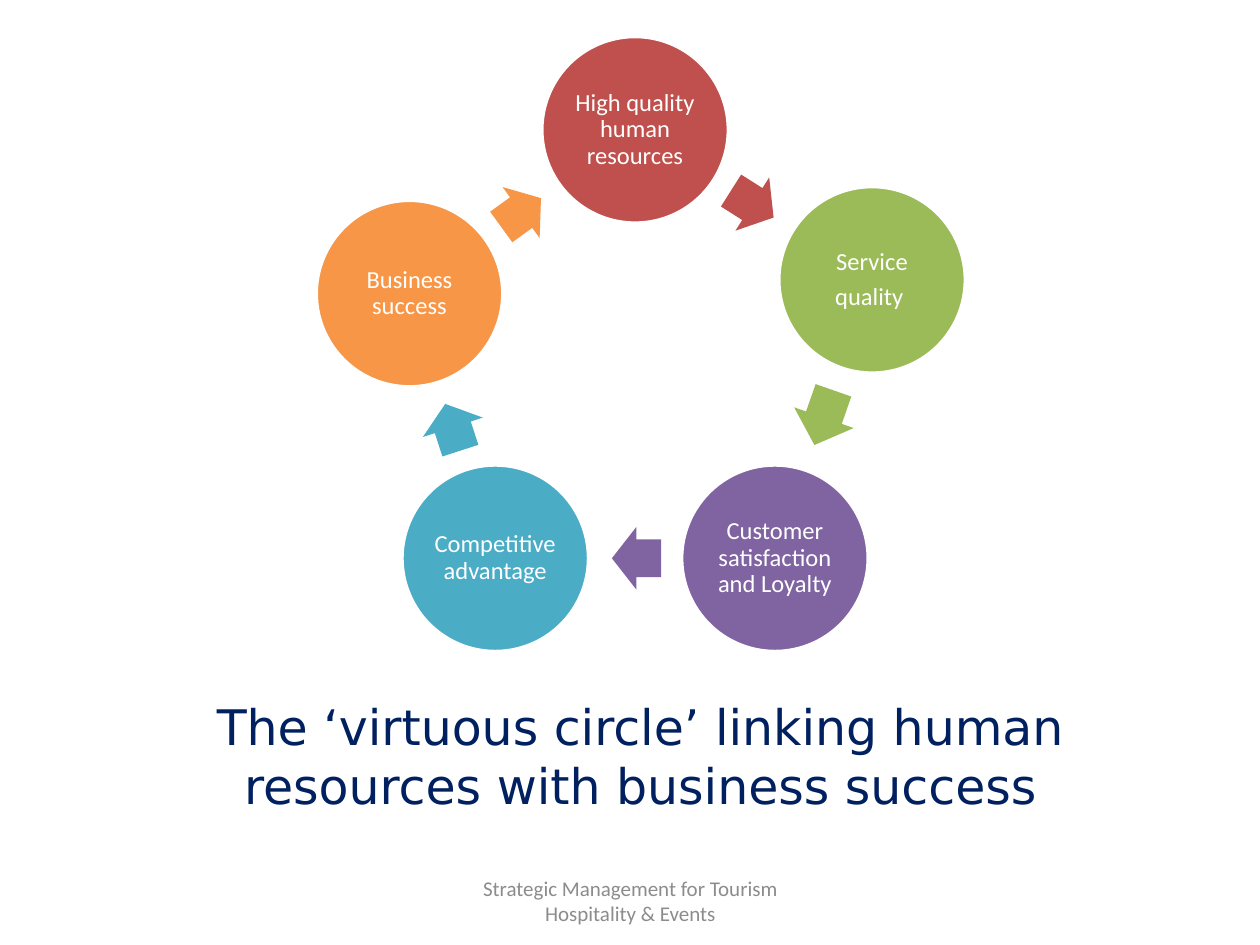
import math

import pptx
import pptx.dml.color
import pptx.enum.shapes
import pptx.enum.text
import pptx.util

Pt = pptx.util.Pt
MSO_SHAPE = pptx.enum.shapes.MSO_SHAPE
ANCHOR = pptx.enum.text.MSO_ANCHOR
CENTER = pptx.enum.text.PP_ALIGN.CENTER

DIAMETER = 106.6
ARROW_HEIGHT = 36
ARROW_SETBACK = 0.8

STAGES = [
    (["High quality human resources"], 309.6, 20.9, "C0504D", 28.8),
    (["Service", "quality "], 445, 106.6, "9BBB59", 33.1),
    (["Customer satisfaction and Loyalty"], 389.5, 265.7, "8064A2", 28.1),
    (["Competitive advantage"], 229.7, 265.7, "4BACC6", 28.1),
    (["Business success"], 180.7, 114.5, "F79646", 28.1),
]

CIRCLE_FRAME = {
    "word_wrap": True, "vertical_anchor": ANCHOR.MIDDLE,
    "margin_left": Pt(1.4), "margin_right": Pt(1.4),
    "margin_top": Pt(1.4), "margin_bottom": Pt(1.4),
}
CIRCLE_PARAGRAPH = {"alignment": CENTER, "line_spacing": 0.9, "space_after": Pt(4.9)}
CIRCLE_FONT = {"name": "Calibri", "size": Pt(14)}


def rgb(color):
    return pptx.dml.color.RGBColor.from_string(color)


def set_attrs(obj, values):
    for name, value in values.items():
        setattr(obj, name, value)


def write_text(tf, lines, frame, paragraph, font, color):
    set_attrs(tf, frame)
    for i, line in enumerate(lines):
        p = tf.paragraphs[0] if i == 0 else tf.add_paragraph()
        set_attrs(p, paragraph)
        r = p.add_run()
        r.text = line
        set_attrs(r.font, font)
        r.font.color.rgb = rgb(color)


def add_filled(s, kind, left, top, width, height, color):
    sp = s.shapes.add_shape(kind, Pt(left), Pt(top), Pt(width), Pt(height))
    sp.shadow.inherit = False
    sp.fill.solid()
    sp.fill.fore_color.rgb = rgb(color)
    return sp


def add_circle(s, lines, left, top, color):
    sp = add_filled(s, MSO_SHAPE.OVAL, left, top, DIAMETER, DIAMETER, color)
    sp.line.color.rgb = rgb("FFFFFF")
    sp.line.width = Pt(2)
    write_text(sp.text_frame, lines, CIRCLE_FRAME, CIRCLE_PARAGRAPH, CIRCLE_FONT, "FFFFFF")


def add_arrow(s, start, end, width, color):
    angle = math.atan2(end[1] - start[1], end[0] - start[0])
    x = (start[0] + end[0] + DIAMETER) / 2 - ARROW_SETBACK * math.cos(angle)
    y = (start[1] + end[1] + DIAMETER) / 2 - ARROW_SETBACK * math.sin(angle)
    sp = add_filled(s, MSO_SHAPE.RIGHT_ARROW, x - width / 2, y - ARROW_HEIGHT / 2,
                    width, ARROW_HEIGHT, color)
    sp.line.fill.background()
    sp.adjustments[0] = 0.6
    sp.adjustments[1] = 0.5
    sp.rotation = math.degrees(angle) % 360


def add_text(s, text, box, frame, paragraph, font, color):
    sp = s.shapes.add_textbox(*map(Pt, box))
    write_text(sp.text_frame, [text], {"word_wrap": True, **frame},
               {"alignment": CENTER, **paragraph}, font, color)


def main():
    prs = pptx.Presentation()
    prs.slide_width, prs.slide_height = Pt(720), Pt(540)
    s = prs.slides.add_slide(prs.slide_layouts[6])
    add_text(s, "The ‘virtuous circle’ linking human resources with business success",
             (99.4, 394.6, 532.8, 79.2), {}, {"space_before": Pt(5.6)},
             {"name": "DejaVu Sans", "size": Pt(28)}, "002060")
    add_text(s, "Strategic Management for Tourism Hospitality & Events",
             (246.2, 500.4, 228.2, 28.8), {"vertical_anchor": ANCHOR.MIDDLE}, {},
             {"name": "Calibri", "size": Pt(12)}, "8C8C8C")
    for i, (lines, left, top, color, arrow_width) in enumerate(STAGES):
        following = STAGES[(i + 1) % len(STAGES)]
        add_circle(s, lines, left, top, color)
        add_arrow(s, (left, top), following[1:3], arrow_width, color)
    prs.save("out.pptx")


if __name__ == "__main__":
    main()
